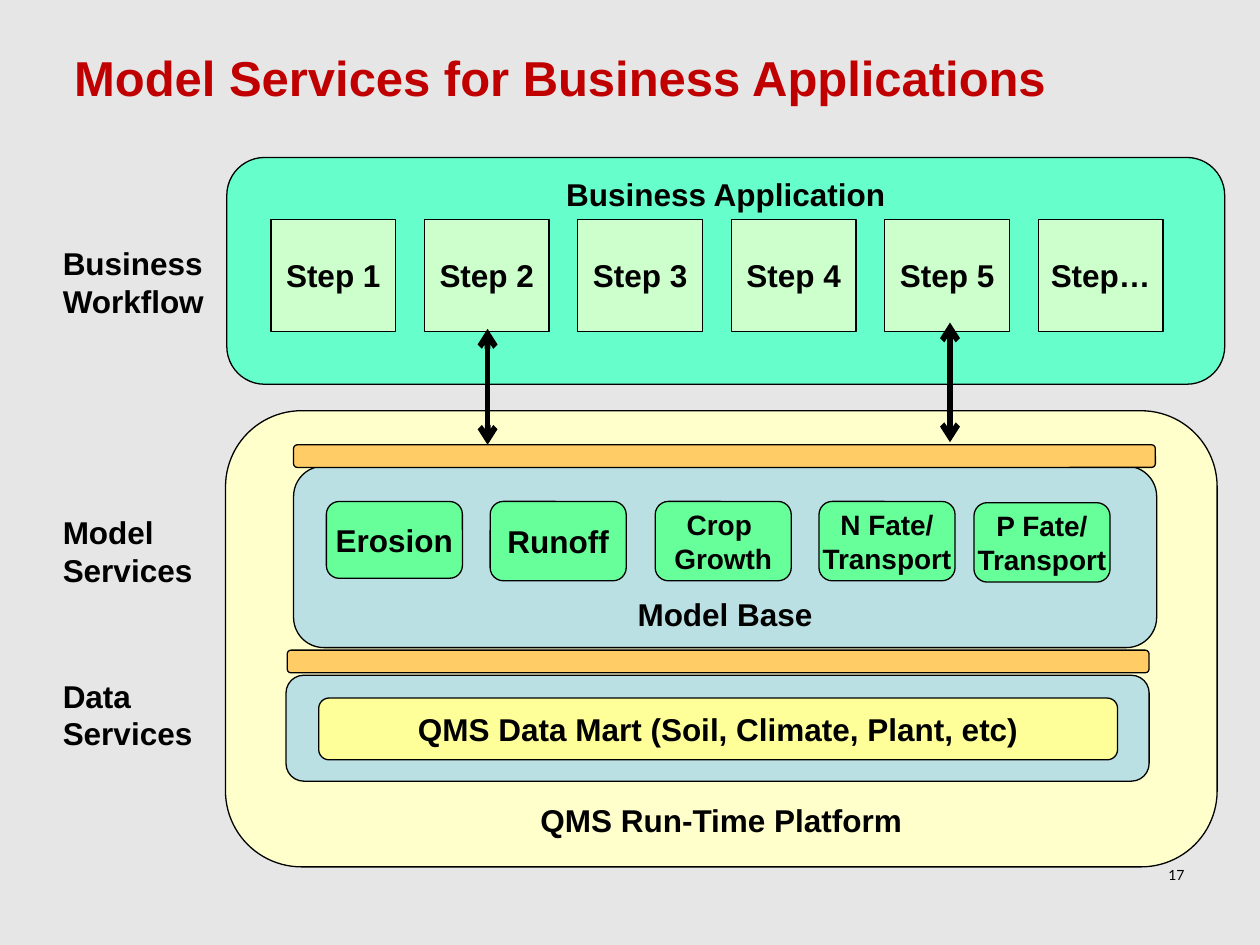
from lxml import etree
from pptx import Presentation
from pptx.dml.color import RGBColor
from pptx.enum.shapes import MSO_CONNECTOR, MSO_SHAPE
from pptx.enum.text import MSO_ANCHOR, PP_ALIGN
from pptx.oxml.ns import qn
from pptx.util import Inches, Pt

RECTANGLE = MSO_SHAPE.RECTANGLE
ROUNDED = MSO_SHAPE.ROUNDED_RECTANGLE
STRAIGHT = MSO_CONNECTOR.STRAIGHT
TOP, MIDDLE, BOTTOM = MSO_ANCHOR.TOP, MSO_ANCHOR.MIDDLE, MSO_ANCHOR.BOTTOM
LEFT, CENTER, RIGHT = PP_ALIGN.LEFT, PP_ALIGN.CENTER, PP_ALIGN.RIGHT

COLORS = {
    "background": "E6E6E6",
    "title": "C00000",
    "ink": "000000",
    "platform": "FFFFCC",
    "application": "66FFCC",
    "step": "CCFFCC",
    "base": "BBE0E3",
    "service": "66FF99",
    "mart": "FFFF99",
    "bar": "FFCC66",
}
STEPS = ["Step 1", "Step 2", "Step 3", "Step 4", "Step 5", "Step…"]
SERVICES = [
    ("Erosion", 0.26, 0.28, 0.61, 18),
    ("Runoff", 1.56, 0.28, 0.63, 18),
    ("Crop \nGrowth", 2.87, 0.28, 0.63, 16),
    ("N Fate/\nTransport", 4.17, 0.28, 0.63, 16),
    ("P Fate/\nTransport", 5.4, 0.29, 0.63, 16),
]
SIDE_LABELS = [
    ("Business\nWorkflow", 1.89, 1.33),
    ("Model\nServices", 4.02, 1.24),
    ("Data\nServices", 5.32, 1.24),
]
ARROWS = [(3.87, 2.61, 3.53), (7.54, 2.56, 3.51)]


def color(name):
    """Return the named colour."""
    return RGBColor.from_string(COLORS[name])


def write_text(shape, text, align=CENTER, anchor=MIDDLE, wrap=False, ink="ink", **font_values):
    """Write lines of text into a shape, one paragraph each."""
    frame = shape.text_frame
    frame.text = text
    frame.word_wrap = wrap
    frame.vertical_anchor = anchor
    values = {"name": "Arial", "size": 18, "bold": True} | font_values
    values["size"] = Pt(values["size"])
    for paragraph in frame.paragraphs:
        paragraph.alignment = align
        for run in paragraph.runs:
            for key, value in values.items():
                setattr(run.font, key, value)
            run.font.color.rgb = color(ink)


def add_box(slide, box, fill, text="", kind=ROUNDED, **text_values):
    """Add an outlined, filled box with optional text."""
    shape = slide.shapes.add_shape(kind, *map(Inches, box))
    shape.shadow.inherit = False
    shape.fill.solid()
    shape.fill.fore_color.rgb = color(fill)
    shape.line.color.rgb = color("ink")
    shape.line.width = Pt(0.75)
    if text:
        write_text(shape, text, **text_values)


def add_label(slide, box, text, **text_values):
    """Add a plain text box."""
    shape = slide.shapes.add_textbox(*map(Inches, box))
    write_text(shape, text, **({"align": LEFT, "anchor": TOP} | text_values))


def add_application(slide, box):
    """Add the business application panel and its row of steps."""
    left, top, width, height = box
    add_box(slide, box, "application", "Business Application", anchor=TOP)
    for index, step in enumerate(STEPS):
        step_box = (left + 0.35 + 1.218 * index, top + 0.49, 0.99, 0.89)
        add_box(slide, step_box, "step", step, kind=RECTANGLE)


def add_model_base(slide, box):
    """Add the model base panel and its services."""
    left, top, width, height = box
    add_box(slide, box, "base", "Model Base", anchor=BOTTOM)
    for name, x, y, service_height, size in SERVICES:
        add_box(slide, (left + x, top + y, 1.08, service_height), "service", name, size=size)


def add_data_services(slide, box):
    """Add the data panel with the data mart inside."""
    left, top, width, height = box
    add_box(slide, box, "base")
    mart_box = (left + 0.26, top + 0.18, width - 0.51, height - 0.35)
    add_box(slide, mart_box, "mart", "QMS Data Mart (Soil, Climate, Plant, etc)")


def add_platform(slide, box):
    """Add the run-time platform with its layers and interface bars."""
    left, top, width, height = box
    add_box(slide, box, "platform", "QMS Run-Time Platform", anchor=BOTTOM)
    add_model_base(slide, (left + 0.54, top + 0.44, 6.85, 1.44))
    add_data_services(slide, (left + 0.48, top + 2.1, 6.85, 0.84))
    for x, y in ((0.49, 1.9), (0.54, 0.27)):
        add_box(slide, (left + x, top + y, 6.84, 0.18), "bar")


def add_double_arrow(slide, x, top, bottom):
    """Add a vertical line with an arrowhead at both ends."""
    connector = slide.shapes.add_connector(
        STRAIGHT, Inches(x), Inches(top), Inches(x), Inches(bottom))
    connector.line.color.rgb = color("ink")
    connector.line.width = Pt(3.25)
    line = connector.line._get_or_add_ln()
    for end in ("a:headEnd", "a:tailEnd"):
        etree.SubElement(line, qn(end), type="arrow")
    etree.SubElement(connector._element.spPr, qn("a:effectLst"))


def main():
    """Build and save the slide."""
    presentation = Presentation()
    presentation.slide_width = Inches(10)
    presentation.slide_height = Inches(7.5)
    slide = presentation.slides.add_slide(presentation.slide_layouts[6])
    slide.background.fill.solid()
    slide.background.fill.fore_color.rgb = color("background")

    add_label(slide, (0.49, 0.33, 7.98, 0.57), "Model Services for Business Applications",
              wrap=True, ink="title", size=28)
    add_platform(slide, (1.79, 3.26, 7.87, 3.62))
    add_application(slide, (1.8, 1.25, 7.92, 1.8))
    for text, top, width in SIDE_LABELS:
        add_label(slide, (0.4, top, width, 0.71), text)
    for arrow in ARROWS:
        add_double_arrow(slide, *arrow)
    add_label(slide, (7.17, 6.83, 2.33, 0.52), "17", align=RIGHT, wrap=True,
              name="Lato", size=8, bold=False)
    presentation.save("out.pptx")


if __name__ == "__main__":
    main()
